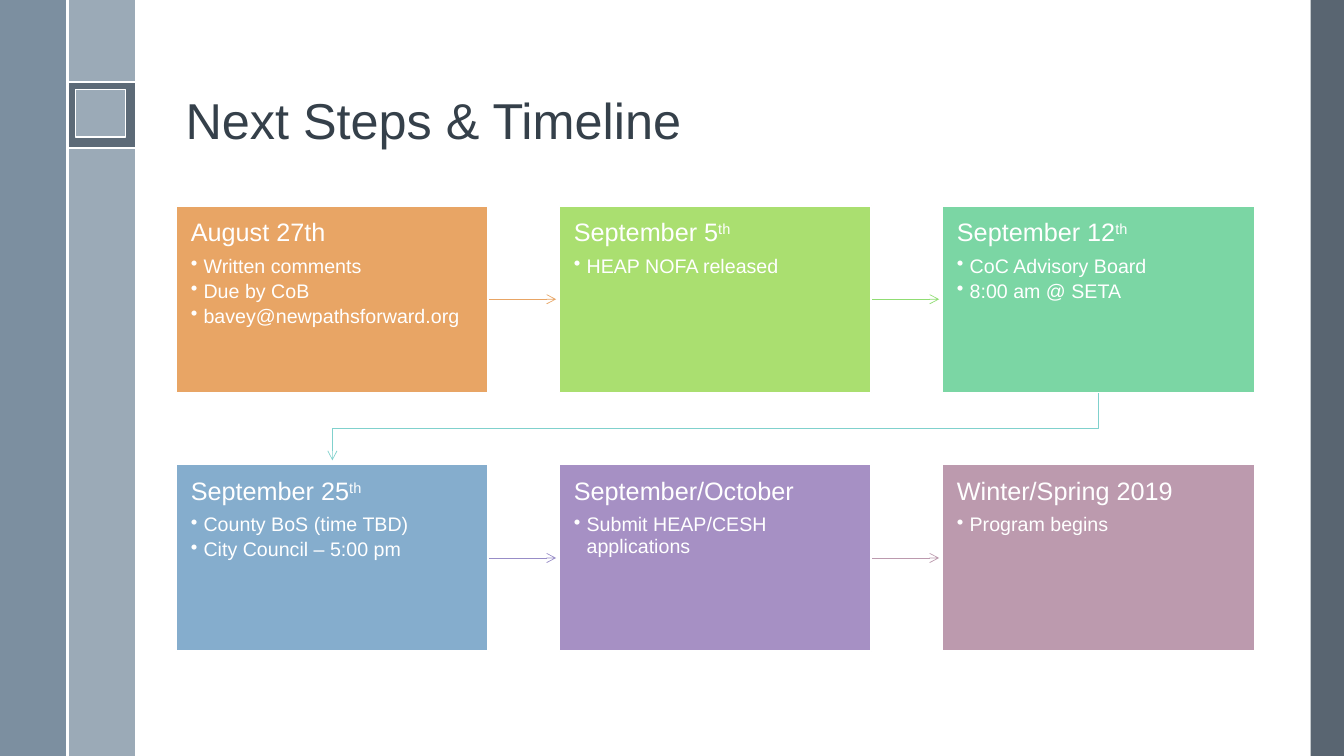
from pptx import Presentation
from pptx.dml.color import RGBColor
from pptx.enum.shapes import MSO_CONNECTOR, MSO_SHAPE
from pptx.enum.text import MSO_ANCHOR, MSO_AUTO_SIZE, PP_ALIGN
from pptx.oxml.ns import qn
from pptx.util import Cm, Pt
from lxml.etree import SubElement

TITLE = "Next Steps & Timeline"
# date, superscript, bullets, box colour
STEPS = [
    ("August 27th", "", ["Written comments", "Due by CoB", "bavey@newpathsforward.org"], "orange"),
    ("September 5", "th", ["HEAP NOFA released"], "lime"),
    ("September 12", "th", ["CoC Advisory Board", "8:00 am @ SETA"], "green"),
    ("September 25", "th", ["County BoS (time TBD)", "City Council – 5:00 pm"], "blue"),
    ("September/October", "", ["Submit HEAP/CESH applications"], "purple"),
    ("Winter/Spring 2019", "", ["Program begins"], "rose"),
]
ARROWS = ["orange", "leaf", "teal", "violet", "rose"]
COLORS = {
    "white": "FFFFFF", "title": "35404A", "dark": "475562", "steel": "6A8093", "mist": "9BAAB7",
    "orange": "E8A565", "lime": "AADF70", "green": "7BD6A4", "blue": "85ADCD",
    "purple": "A690C4", "rose": "BC9AAE", "leaf": "90DD73", "teal": "80D1CD", "violet": "988DC7",
}
FONT = "Arial"
# left, top, width, height in cm, colour, opacity in percent
BANDS = [
    (33.02, 0, 0.84, 19.05, "dark", 90),
    (1.7, 0, 1.7, 19.05, "mist", 100),
    (0, 0, 1.7, 19.05, "steel", 88),
    (1.7, 2.06, 1.7, 1.68, "dark", 75),
]
RULES = [(1.7, 2.06, 3.4, 2.06), (1.7, 3.74, 3.4, 3.74), (1.7, 0, 1.7, 19.05)]

COLUMNS = 3
LEFT, TOP, BOX_W, BOX_H = 4.45, 5.19, 7.85, 4.7
PITCH_X, PITCH_Y = 9.65, 6.52
ARROW_LEN = 1.71


def rgb(name):
    return RGBColor.from_string(COLORS[name])


def add_rect(s, x, y, w, h, color, opacity=100, border=None):
    sp = s.shapes.add_shape(MSO_SHAPE.RECTANGLE, Cm(x), Cm(y), Cm(w), Cm(h))
    sp.shadow.inherit = False
    sp.fill.solid()
    sp.fill.fore_color.rgb = rgb(color)
    if opacity < 100:
        clr = sp.fill._xPr.find(qn("a:solidFill"))[0]
        SubElement(clr, qn("a:alpha")).set("val", str(opacity * 1000))
    if border:
        sp.line.color.rgb = rgb(border)
        sp.line.width = Pt(1)
    else:
        sp.line.fill.background()
    return sp


def style_line(sp, color, width, arrow=False):
    sp.line.color.rgb = rgb(color)
    sp.line.width = Pt(width)
    if arrow:
        SubElement(sp.line._get_or_add_ln(), qn("a:tailEnd")).set("type", "arrow")


def add_line(s, x1, y1, x2, y2, color, width, arrow=False):
    cn = s.shapes.add_connector(MSO_CONNECTOR.STRAIGHT, Cm(x1), Cm(y1), Cm(x2), Cm(y2))
    style_line(cn, color, width, arrow)
    SubElement(cn._element.spPr, qn("a:effectLst"))


def add_bent_arrow(s, points, color):
    pts = [(Cm(x), Cm(y)) for x, y in points]
    fb = s.shapes.build_freeform(*pts[0])
    fb.add_line_segments(pts[1:], close=False)
    sp = fb.convert_to_shape()
    sp.shadow.inherit = False
    sp.fill.background()
    style_line(sp, color, 0.5, arrow=True)


def add_run(p, text, size, color):
    r = p.add_run()
    r.text = text
    r.font.name, r.font.size = FONT, Pt(size)
    r.font.color.rgb = rgb(color)
    return r


def format_paragraph(p, after):
    p.alignment = PP_ALIGN.LEFT
    p.line_spacing = 0.9
    p.space_before, p.space_after = Pt(0), Pt(after)


def box_origin(i):
    row, col = divmod(i, COLUMNS)
    return LEFT + col * PITCH_X, TOP + row * PITCH_Y


def add_step_arrow(s, i, color):
    """Link step i to the next one, bending down at the end of a row."""
    x, y = box_origin(i)
    if (i + 1) % COLUMNS:
        right, mid = x + BOX_W, y + BOX_H / 2
        add_line(s, right, mid, right + ARROW_LEN, mid, color, 0.5, arrow=True)
    else:
        start, end = x + BOX_W / 2, LEFT + BOX_W / 2
        bottom, bend = y + BOX_H, y + (BOX_H + PITCH_Y) / 2
        add_bent_arrow(s, [(start, bottom), (start, bend), (end, bend),
                           (end, bottom + ARROW_LEN)], color)


def add_step(s, i, date, suffix, bullets, color):
    sp = add_rect(s, *box_origin(i), BOX_W, BOX_H, color, border="white")
    tf = sp.text_frame
    tf.word_wrap = True
    tf.vertical_anchor = MSO_ANCHOR.TOP
    tf.margin_left = tf.margin_right = tf.margin_top = tf.margin_bottom = Cm(0.36)
    p = tf.paragraphs[0]
    format_paragraph(p, 6.3)
    add_run(p, date, 18, "white")
    if suffix:
        r = add_run(p, suffix, 18, "white")
        r.font._element.set("baseline", "30000")
    for bullet in bullets:
        p = tf.add_paragraph()
        p.level = 1
        format_paragraph(p, 2.7)
        pPr = p._p.get_or_add_pPr()
        pPr.set("marL", str(Cm(0.32)))
        pPr.set("indent", str(-Cm(0.32)))
        SubElement(pPr, qn("a:buChar")).set("char", "•")
        add_run(p, bullet, 14, "white")


def add_title(s):
    title = s.shapes.title
    title.left, title.top, title.width, title.height = Cm(4.42), Cm(0.48), Cm(27.18), Cm(3.45)
    tf = title.text_frame
    tf.word_wrap = True
    tf.auto_size = MSO_AUTO_SIZE.NONE
    tf.vertical_anchor = MSO_ANCHOR.BOTTOM
    p = tf.paragraphs[0]
    format_paragraph(p, 0)
    add_run(p, TITLE, 36, "title")


def main():
    prs = Presentation()
    prs.slide_width, prs.slide_height = Cm(33.86), Cm(19.05)
    s = prs.slides.add_slide(prs.slide_layouts[5])
    add_title(s)
    for band in BANDS:
        add_rect(s, *band)
    for rule in RULES:
        add_line(s, *rule, "white", 1.5)
    add_rect(s, 1.9, 2.26, 1.27, 1.19, "mist", border="white")
    for i, color in enumerate(ARROWS):
        add_step_arrow(s, i, color)
    for i, step in enumerate(STEPS):
        add_step(s, i, *step)
    prs.save("out.pptx")


if __name__ == "__main__":
    main()
